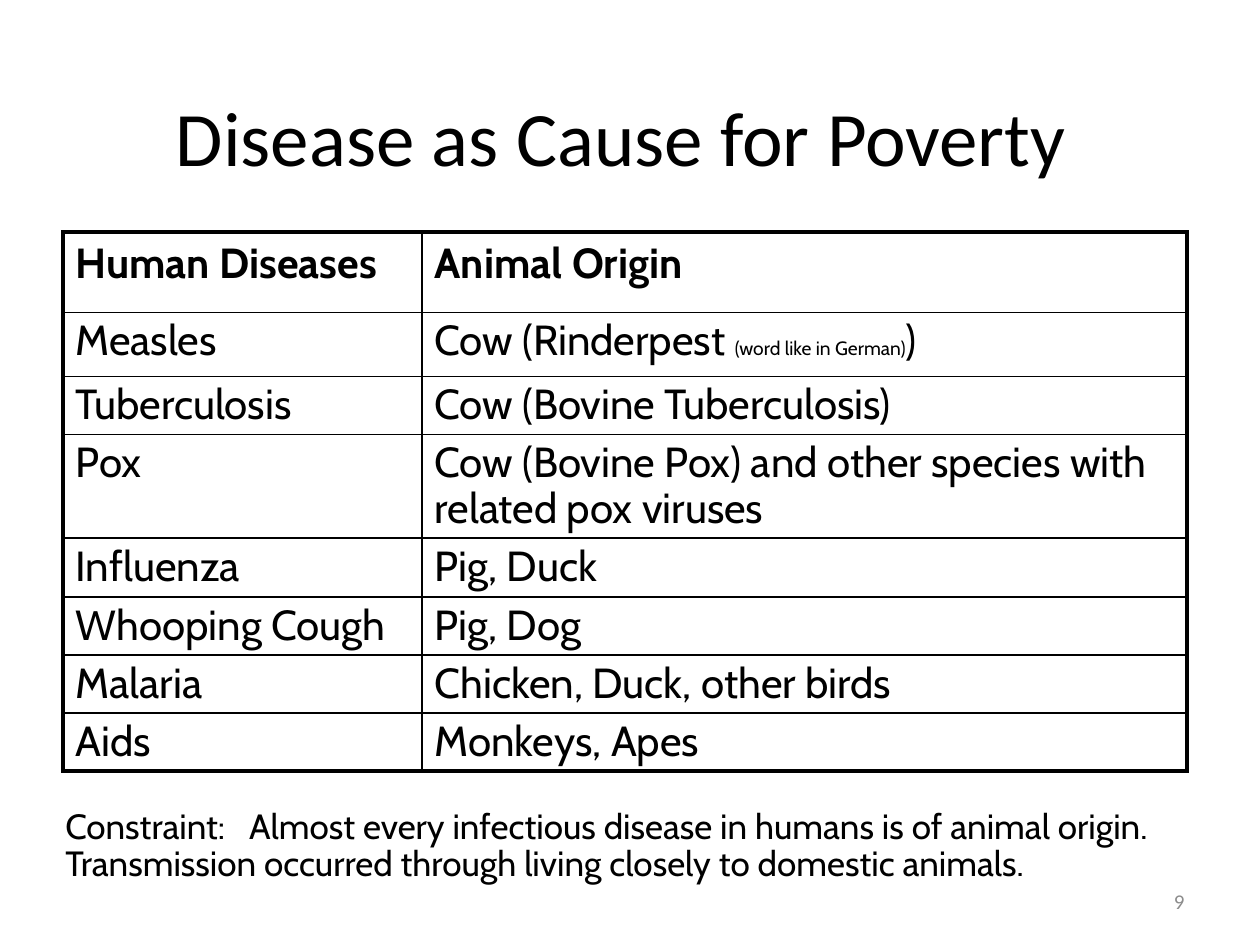
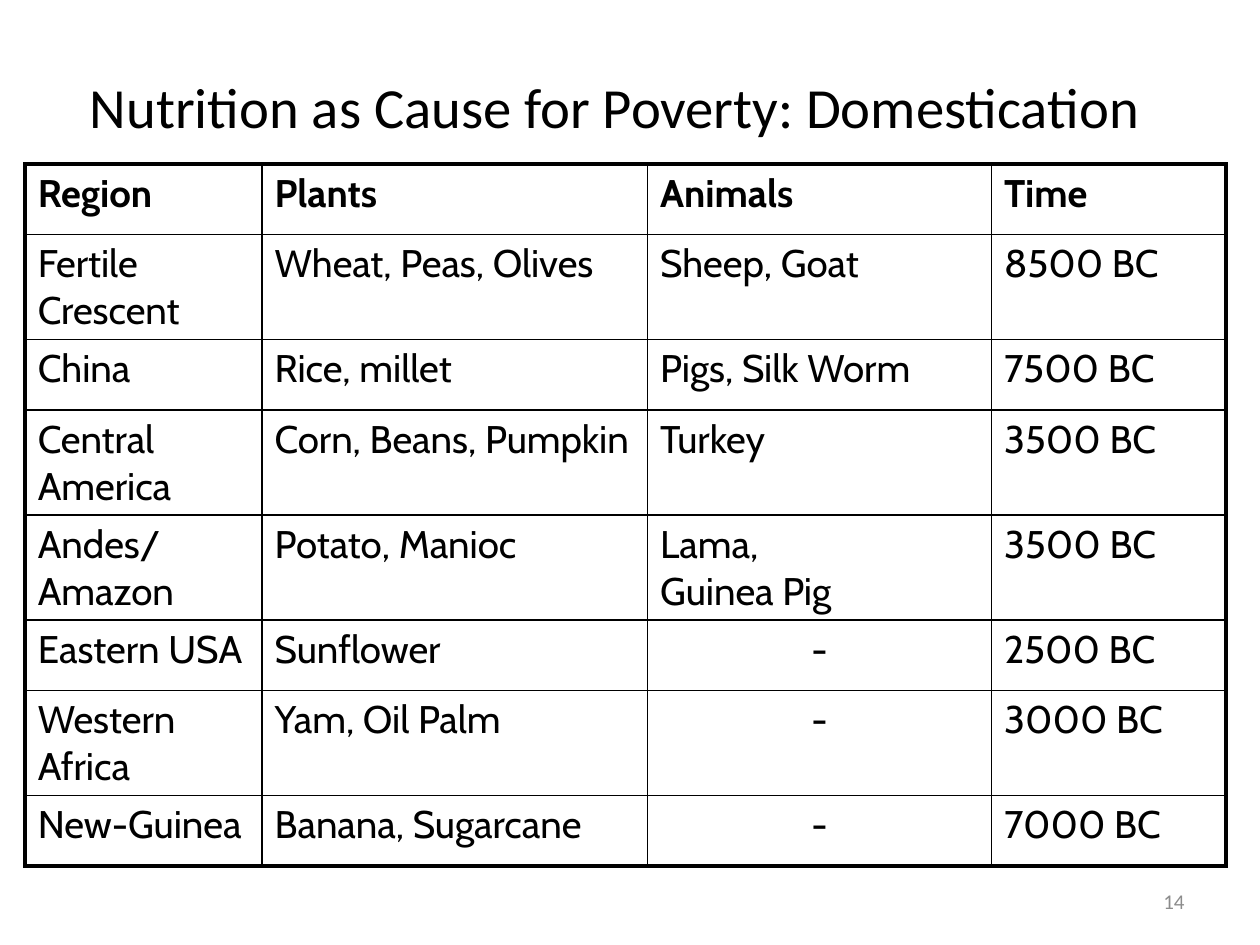
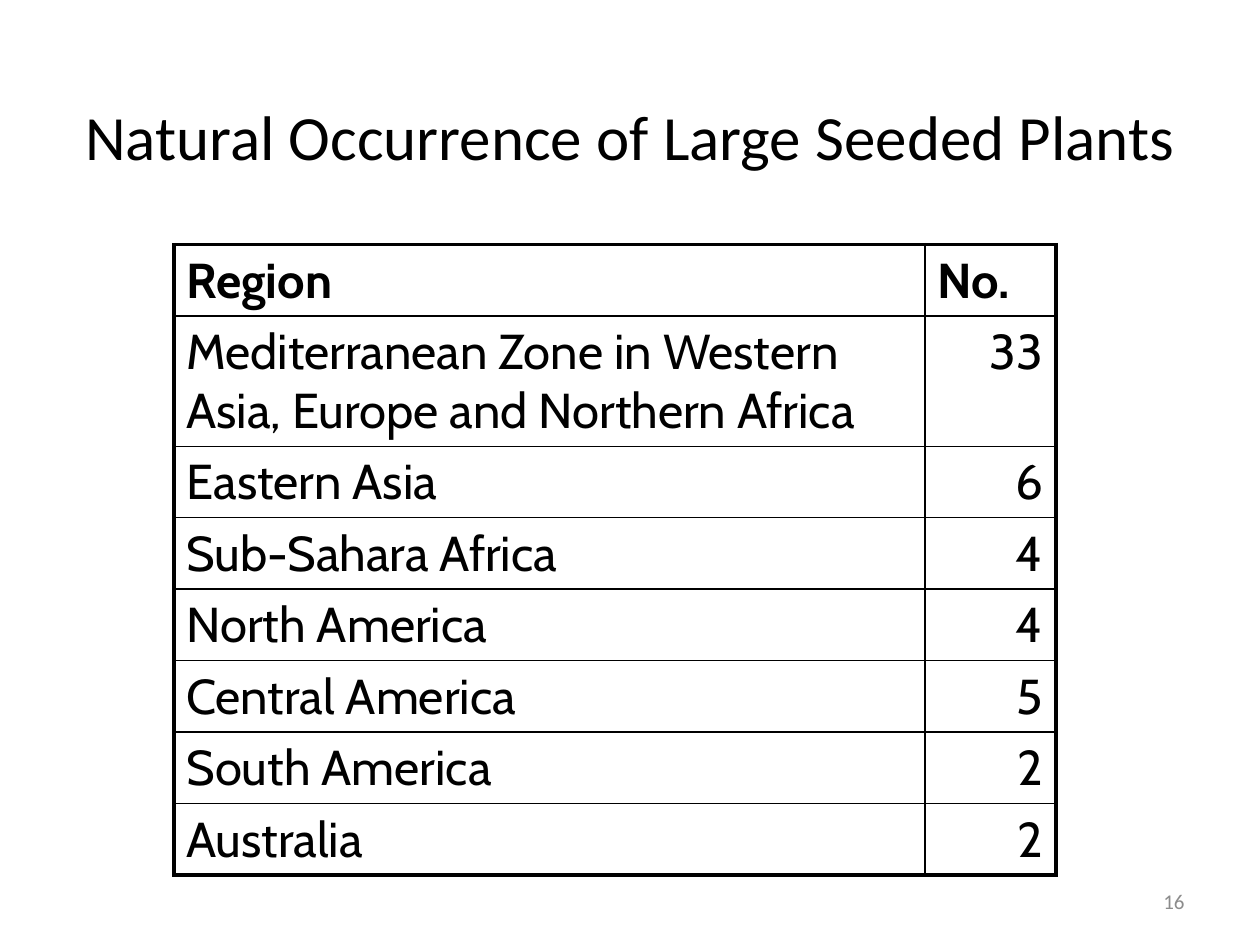
from dataclasses import dataclass

from lxml import etree
from pptx import Presentation
from pptx.dml.color import RGBColor
from pptx.enum.text import MSO_ANCHOR, PP_ALIGN
from pptx.oxml.ns import qn
from pptx.util import Inches, Pt

LEFT, CENTER, RIGHT = PP_ALIGN.LEFT, PP_ALIGN.CENTER, PP_ALIGN.RIGHT
MIDDLE = MSO_ANCHOR.MIDDLE
TITLE_ONLY = 5


@dataclass(frozen=True)
class Theme:
    ink: str = "000000"
    muted: str = "8C8C8C"
    title_font: str = "Calibri"
    body_font: str = "Cabin"
    note_size: float = 20
    aside_size: float = 11
    number_size: float = 12
    frame_width: float = 2.25
    grid_width: float = 1


THEME = Theme()
TITLE_BOX = (0.5, 0.32, 9, 1.51)
NUMBER_BOX = (7.17, 6.95, 2.33, 0.4)

DISEASES = [
    ("Human Diseases", "Animal Origin"),
    ("Measles", ("Cow (Rinderpest ", "(word like in German)", ")")),
    ("Tuberculosis", "Cow (Bovine Tuberculosis)"),
    ("Pox", "Cow (Bovine Pox) and other species with related pox viruses"),
    ("Influenza", "Pig, Duck"),
    ("Whooping Cough", "Pig, Dog"),
    ("Malaria", "Chicken, Duck, other birds"),
    ("Aids", "Monkeys, Apes"),
]
DOMESTICATION = [
    ("Region", "Plants", "Animals", "Time"),
    ("Fertile Crescent", "Wheat, Peas, Olives", "Sheep, Goat", "8500 BC"),
    ("China", "Rice, millet", "Pigs, Silk Worm", "7500 BC"),
    ("Central America", "Corn, Beans, Pumpkin", "Turkey", "3500 BC"),
    ("Andes/\nAmazon", "Potato, Manioc", "Lama,\nGuinea Pig", "3500 BC"),
    ("Eastern USA", "Sunflower", "-", "2500 BC"),
    ("Western Africa", "Yam, Oil Palm", "-", "3000 BC"),
    ("New-Guinea", "Banana, Sugarcane", "-", "7000 BC"),
]
SEEDED_PLANTS = [
    ("Region", "No."),
    ("Mediterranean Zone in Western Asia, Europe and Northern Africa", "33"),
    ("Eastern Asia", "6"),
    ("Sub-Sahara Africa", "4"),
    ("North America", "4"),
    ("Central America", "5"),
    ("South America", "2"),
    ("Australia", "2"),
]
CONSTRAINT = (
    "Constraint: \tAlmost every infectious disease in humans is of animal origin. "
    "Transmission occurred through living closely to domestic animals."
)


def style(p, font, size, color=THEME.ink, align=LEFT, bold=False):
    p.alignment = align
    p.font.name = font
    p.font.size = Pt(size)
    p.font.bold = bold
    p.font.color.rgb = RGBColor.from_string(color)


def add_textbox(s, box, text):
    tf = s.shapes.add_textbox(*map(Inches, box)).text_frame
    tf.word_wrap = True
    p = tf.paragraphs[0]
    p.text = text
    return tf, p


def add_titled_slide(prs, title, size, number, box=TITLE_BOX):
    s = prs.slides.add_slide(prs.slide_layouts[TITLE_ONLY])
    # Title
    sp = s.shapes.title
    sp.left, sp.top, sp.width, sp.height = map(Inches, box)
    tf = sp.text_frame
    tf.vertical_anchor = MIDDLE
    tf.text = title
    style(tf.paragraphs[0], THEME.title_font, size, align=CENTER)
    # Slide number
    tf, p = add_textbox(s, NUMBER_BOX, str(number))
    tf.vertical_anchor = MIDDLE
    style(p, THEME.title_font, THEME.number_size, THEME.muted, RIGHT)
    return s


def add_note(s, box, text, tab):
    p = add_textbox(s, box, text)[1]
    style(p, THEME.body_font, THEME.note_size)
    p.line_spacing = 0.9
    # The tab list belongs just before the default run properties
    pPr = p.font._element.getparent()
    tabs = etree.Element(qn("a:tabLst"))
    etree.SubElement(tabs, qn("a:tab"), pos=str(Inches(tab)), algn="l")
    pPr.insert(len(pPr) - 1, tabs)


def set_borders(cell, on_frame):
    """Draw the four sides, heavier where the cell meets the table frame."""
    tcPr = cell._tc.get_or_add_tcPr()
    for i, (side, outer) in enumerate(zip("LRTB", on_frame)):
        width = THEME.frame_width if outer else THEME.grid_width
        ln = etree.Element(qn(f"a:ln{side}"), w=str(Pt(width)))
        fill = etree.SubElement(ln, qn("a:solidFill"))
        etree.SubElement(fill, qn("a:srgbClr"), val=THEME.ink)
        tcPr.insert(i, ln)


def fill_cell(cell, content, size, header, spacing):
    p = cell.text_frame.paragraphs[0]
    align = LEFT
    if isinstance(content, tuple):
        # Text with a small aside in its middle
        for text in content:
            p.add_run().text = text
        p.runs[1].font.size = Pt(THEME.aside_size)
    else:
        p.text = content
        align = CENTER if content == "-" else RIGHT if content.isdigit() else LEFT
    style(p, THEME.body_font, size, align=align, bold=header)
    if not header:
        p.line_spacing = spacing


def add_grid(s, left, top, widths, heights, rows, size, spacing=1.0):
    box = (left, top, sum(widths), sum(heights))
    table = s.shapes.add_table(len(rows), len(widths), *map(Inches, box)).table
    table.first_row = table.horz_banding = False
    for column, width in zip(table.columns, widths):
        column.width = Inches(width)
    last_row, last_col = len(rows) - 1, len(widths) - 1
    for r, (row, height) in enumerate(zip(rows, heights)):
        table.rows[r].height = Inches(height)
        for c, content in enumerate(row):
            cell = table.cell(r, c)
            cell.fill.background()
            fill_cell(cell, content, size, r == 0, spacing)
            set_borders(cell, (c == 0, c == last_col, r == 0, r == last_row))


def main():
    prs = Presentation()
    prs.slide_width, prs.slide_height = Inches(10), Inches(7.5)

    # Diseases and their animal origin
    s = add_titled_slide(prs, "Disease as Cause for Poverty ", 44, 9)
    heights = [0.64, 0.51, 0.42, 0.64, 0.47, 0.42, 0.46, 0.46]
    add_grid(s, 0.5, 1.84, [2.85, 6.07], heights, DISEASES, 24, spacing=0.9)
    add_note(s, (0.42, 6.37, 9.17, 0.71), CONSTRAINT, tab=1.46)

    # Domestication by region
    s = add_titled_slide(prs, "Nutrition as Cause for Poverty: Domestication ",
                         32.4, 14, box=(0.43, 0.21, 9, 1.26))
    even_rows = [0.56] * 8
    add_grid(s, 0.2, 1.3, [1.88, 3.06, 2.73, 1.86], even_rows, DOMESTICATION, 22)

    # Large seeded plants by region
    s = add_titled_slide(prs, "Natural Occurrence of Large Seeded Plants", 36, 16)
    add_grid(s, 1.38, 1.94, [5.96, 1.04], even_rows, SEEDED_PLANTS, 28)

    prs.save("out.pptx")


if __name__ == "__main__":
    main()
